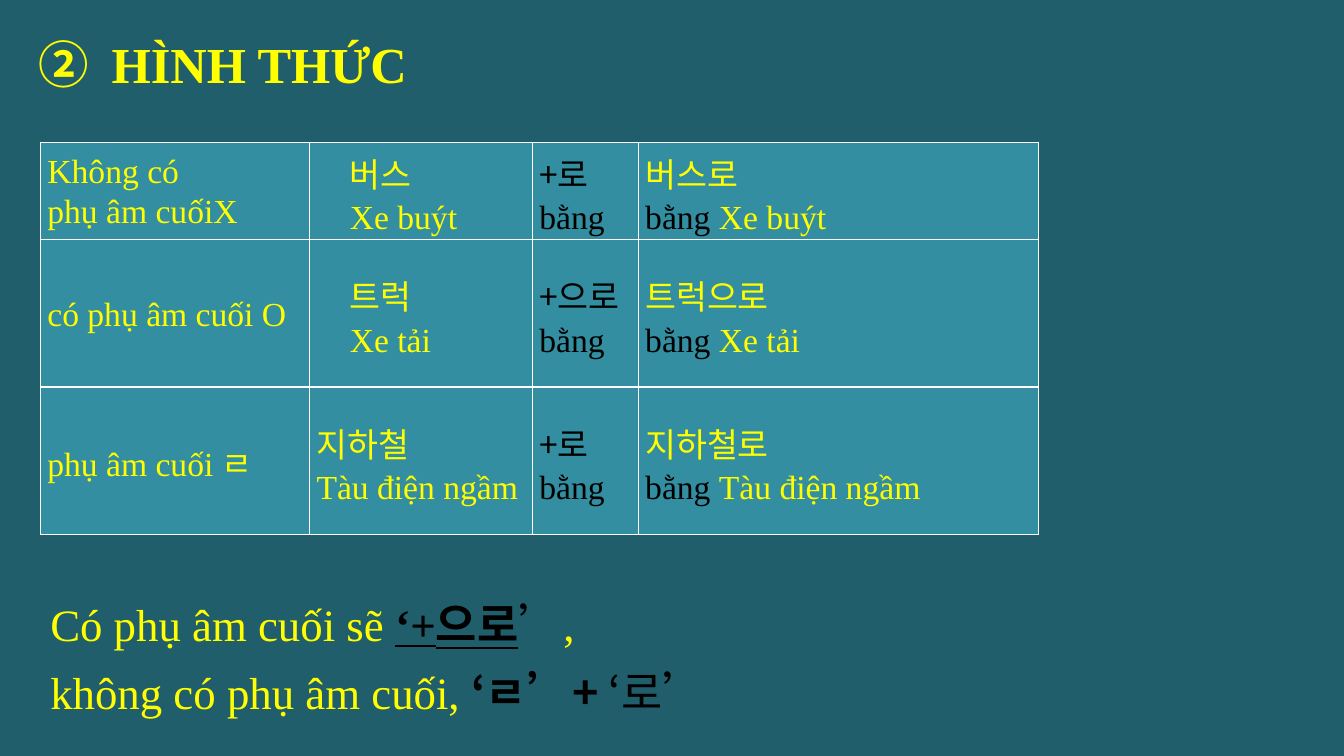
from pptx import Presentation
from pptx.dml.color import RGBColor
from pptx.enum.text import MSO_ANCHOR, PP_ALIGN
from pptx.oxml import parse_xml
from pptx.oxml.ns import nsdecls
from pptx.util import Inches, Pt

TEAL_DARK = RGBColor(0x21, 0x5E, 0x6B)
TEAL = RGBColor(0x32, 0x8E, 0xA0)
YELLOW = RGBColor(0xFF, 0xFF, 0x00)
BLACK = RGBColor(0x00, 0x00, 0x00)
WHITE = RGBColor(0xFF, 0xFF, 0xFF)
LATIN = "Times New Roman"
KOREAN = "Noto Sans CJK KR"


def add_runs(paragraph, size, runs):
    """Add (text, font, colour, bold, underline) runs to a paragraph."""
    for text, face, colour, bold, underline in runs:
        run = paragraph.add_run()
        run.text = text
        font = run.font
        font.size, font.bold, font.underline = Pt(size), bold, underline
        font.color.rgb = colour
        font.name = face
        run._r.get_or_add_rPr().append(
            parse_xml(f'<a:ea {nsdecls("a")} typeface="{KOREAN}"/>'))


def add_borders(cell):
    """Draw thin white lines on the four sides of a cell."""
    properties = cell._tc.get_or_add_tcPr()
    for index, side in enumerate(("lnL", "lnR", "lnT", "lnB")):
        properties.insert(index, parse_xml(
            f'<a:{side} {nsdecls("a")} w="{Pt(1)}"><a:solidFill>'
            f'<a:srgbClr val="{WHITE}"/></a:solidFill></a:{side}>'))


prs = Presentation()
prs.slide_width, prs.slide_height = Inches(13.33), Inches(7.5)
slide = prs.slides.add_slide(prs.slide_layouts[5])
slide.background.fill.solid()
slide.background.fill.fore_color.rgb = TEAL_DARK

# Title
title = slide.shapes.title
title.left, title.top = Inches(0.28), Inches(0.21)
title.width, title.height = Inches(10.3), Inches(0.84)
title.text_frame.vertical_anchor = MSO_ANCHOR.MIDDLE
heading = title.text_frame.paragraphs[0]
heading.alignment = PP_ALIGN.LEFT
add_runs(heading, 36, [("②  ", KOREAN, YELLOW, True, False),
                       ("HÌNH THỨC", LATIN, YELLOW, True, False)])

# Table of forms: condition, noun, meaning, particle, left indent of the noun
forms = [
    (["Không có", "phụ âm cuốiX"], "버스", "Xe buýt", "로", 0.33),
    (["có phụ âm cuối O"], "트럭", "Xe tải", "으로", 0.33),
    (["phụ âm cuối ㄹ"], "지하철", "Tàu điện ngầm", "로", 0),
]
table = slide.shapes.add_table(3, 4, Inches(0.4), Inches(1.41),
                               Inches(9.9), Inches(3.89)).table
table.first_row = table.horz_banding = False
for column, width in zip(table.columns, (2.67, 2.21, 1.05, 3.97)):
    column.width = Inches(width)
for row, height in zip(table.rows, (0.97, 1.46, 1.46)):
    row.height = Inches(height)

for row, (condition, noun, meaning, particle, indent) in zip(table.rows, forms):
    contents = [
        [[(line, LATIN, YELLOW)] for line in condition],
        [[(noun, KOREAN, YELLOW)], [(meaning, LATIN, YELLOW)]],
        [[("+" + particle, KOREAN, BLACK)], [("bằng", LATIN, BLACK)]],
        [[(noun + particle, KOREAN, YELLOW)],
         [("bằng ", LATIN, BLACK), (meaning, LATIN, YELLOW)]],
    ]
    for number, (cell, lines) in enumerate(zip(row.cells, contents)):
        cell.fill.solid()
        cell.fill.fore_color.rgb = TEAL
        add_borders(cell)
        cell.vertical_anchor = MSO_ANCHOR.MIDDLE
        cell.margin_left = cell.margin_right = Inches(0.07)
        cell.margin_top = cell.margin_bottom = 0
        for index, line in enumerate(lines):
            frame = cell.text_frame
            paragraph = frame.paragraphs[0] if index == 0 else frame.add_paragraph()
            paragraph.line_spacing = 1.07
            if number == 1 and indent:
                paragraph.alignment = PP_ALIGN.JUSTIFY
                paragraph._p.get_or_add_pPr().set("indent", str(Inches(indent)))
            add_runs(paragraph, 24, [(*part, False, False) for part in line])

# Rule below the table
rule = slide.shapes.add_textbox(Inches(0.4), Inches(5.83), Inches(9.18), Inches(1.33))
rule.text_frame.word_wrap = True
rule_lines = [
    [("Có phụ âm cuối sẽ ", LATIN, YELLOW, False, False),
     ("‘+으로", LATIN, BLACK, True, True),
     ("’", KOREAN, BLACK, False, False),
     (",", LATIN, YELLOW, False, False)],
    [("không có phụ âm cuối, ", LATIN, YELLOW, False, False),
     ("‘ㄹ’+ ", KOREAN, BLACK, True, False),
     ("‘로", KOREAN, BLACK, False, False),
     ("’", LATIN, BLACK, False, False)],
]
for index, runs in enumerate(rule_lines):
    frame = rule.text_frame
    paragraph = frame.paragraphs[0] if index == 0 else frame.add_paragraph()
    paragraph.alignment = PP_ALIGN.JUSTIFY
    paragraph.line_spacing = 1.07
    paragraph.space_after = Pt(8)
    add_runs(paragraph, 32, runs)

prs.save("out.pptx")
